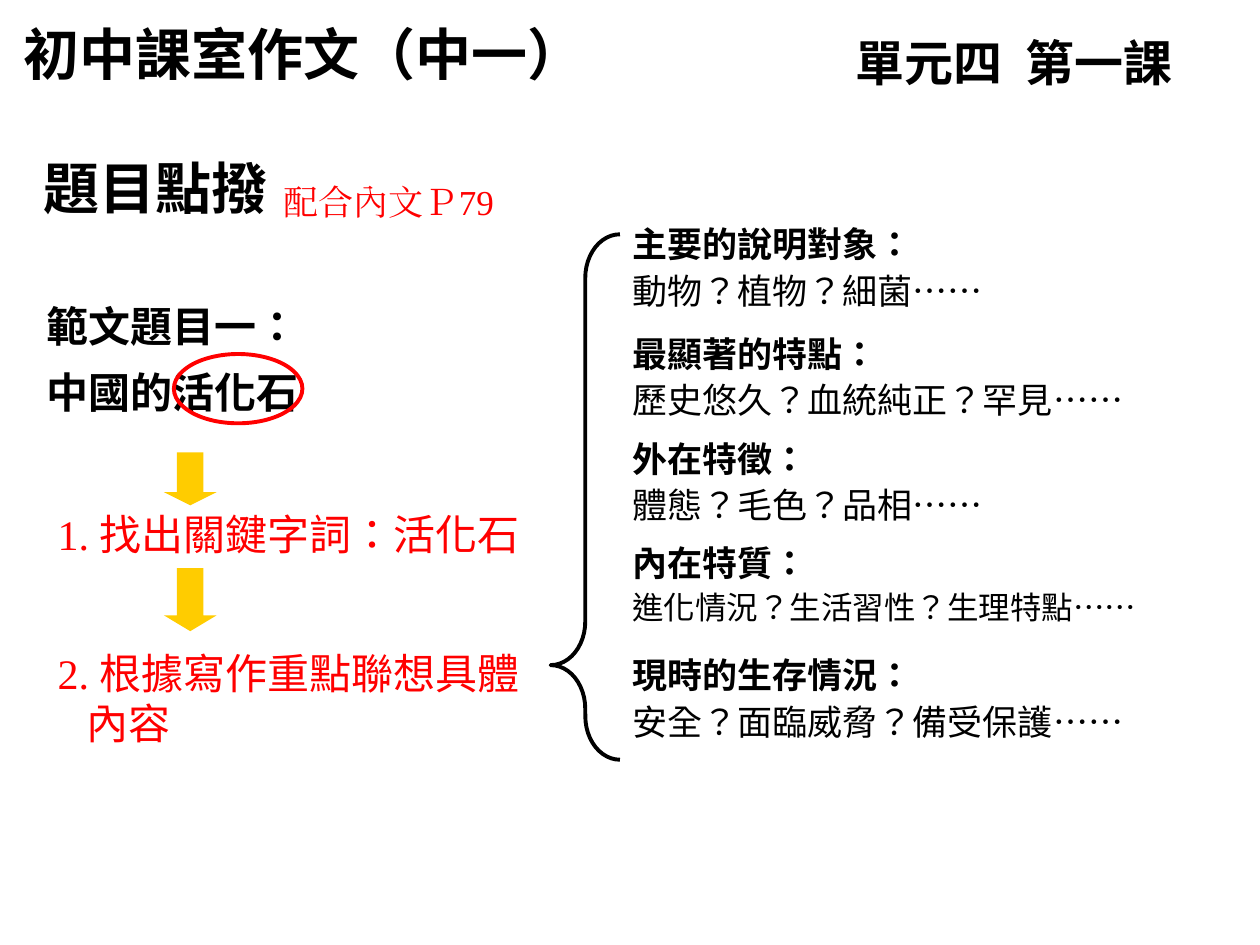
from dataclasses import dataclass

from lxml import etree
from pptx import Presentation
from pptx import util as u
from pptx.dml.color import RGBColor
from pptx.enum import lang, shapes, text
from pptx.oxml import ns

BLACK = RGBColor(0x00, 0x00, 0x00)
RED = RGBColor(0xFF, 0x00, 0x00)
GOLD = RGBColor(0xFF, 0xCC, 0x00)
SANS = "DejaVu Sans"
SERIF = "Times New Roman"
CJK = "Noto Sans CJK SC"


@dataclass
class Words:
    content: str
    size: float
    face: str = SANS
    color: RGBColor = BLACK
    bold: bool = False


@dataclass
class Line:
    words: list[Words]
    before: float = 0
    spacing: float = 1.0
    align: text.PP_ALIGN = text.PP_ALIGN.LEFT
    margin: float = 0
    indent: float = 0


@dataclass
class Box:
    left: float
    top: float
    width: float
    height: float

    def lengths(self) -> list[u.Length]:
        return [u.Inches(n) for n in (self.left, self.top, self.width, self.height)]


@dataclass
class Aspect:
    heading: str
    questions: str
    heading_gap: float
    size: float = 20


def add_words(paragraph, words: Words) -> None:
    run = paragraph.add_run()
    run.text = words.content
    font = run.font
    font.size = u.Pt(words.size)
    font.bold = words.bold
    font.name = words.face
    font.color.rgb = words.color
    font.language_id = lang.MSO_LANGUAGE_ID.TRADITIONAL_CHINESE
    etree.SubElement(run._r.rPr, ns.qn("a:ea")).set("typeface", words.face)


def add_text(slide, box: Box, lines: list[Line]) -> None:
    frame = slide.shapes.add_textbox(*box.lengths()).text_frame
    frame.word_wrap = True
    for index, line in enumerate(lines):
        paragraph = frame.add_paragraph() if index else frame.paragraphs[0]
        paragraph.alignment = line.align
        paragraph.line_spacing = line.spacing
        if index:
            paragraph.space_before = u.Pt(line.before)
        if line.margin:
            properties = paragraph._p.get_or_add_pPr()
            properties.set("marL", str(u.Inches(line.margin)))
            properties.set("indent", str(u.Inches(line.indent)))
        for words in line.words:
            add_words(paragraph, words)


def add_figure(slide, kind: shapes.MSO_SHAPE, box: Box, adjustments: tuple = (),
               fill: RGBColor | None = None, outline: RGBColor | None = None) -> None:
    figure = slide.shapes.add_shape(kind, *box.lengths())
    figure.shadow.inherit = False
    for index, value in enumerate(adjustments):
        figure.adjustments[index] = value
    if fill is None:
        figure.fill.background()
    else:
        figure.fill.solid()
        figure.fill.fore_color.rgb = fill
    if outline is None:
        figure.line.fill.background()
    else:
        figure.line.color.rgb = outline
        figure.line.width = u.Pt(2.25)


def add_step(slide, box: Box, number: str, task: str, rest: str = "") -> None:
    hang = 0.23
    lines = [Line([Words(number, 24, SERIF, RED), Words(task, 24, SANS, RED)],
                  margin=hang, indent=-hang)]
    if rest:
        lines.append(Line([Words(rest, 24, SANS, RED)], margin=hang))
    add_text(slide, box, lines)


def aspect_lines(aspects: list[Aspect]) -> list[Line]:
    lines = []
    for aspect in aspects:
        lines.append(Line([Words(aspect.heading, 20, bold=True)], aspect.heading_gap))
        lines.append(Line([Words(aspect.questions, aspect.size),
                           Words("……", aspect.size, CJK)], 2.4))
    return lines


ASPECTS = [
    Aspect("主要的說明對象：", "動物？植物？細菌", 0),
    Aspect("最顯著的特點：", "歷史悠久？血統純正？罕見", 12),
    Aspect("外在特徵：", "體態？毛色？品相", 9.5),
    Aspect("內在特質：", "進化情況？生活習性？生理特點", 9.5, 18),
    Aspect("現時的生存情況：", "安全？面臨威脅？備受保護", 16),
]


def main() -> None:
    deck = Presentation()
    deck.slide_width, deck.slide_height = u.Inches(10), u.Inches(7.5)
    slide = deck.slides.add_slide(deck.slide_layouts[6])
    kinds = shapes.MSO_SHAPE

    add_text(slide, Box(0.27, 2.22, 5, 1.14),
             [Line([Words(topic, 24, bold=True)], spacing=1.3)
              for topic in ("範文題目一：", "中國的活化石")])
    add_figure(slide, kinds.OVAL, Box(1.38, 2.81, 1.02, 0.55), outline=RED)

    for top, height, head in ((3.59, 0.42, 0.25), (4.51, 0.5, 0.3)):
        add_figure(slide, kinds.DOWN_ARROW, Box(1.3, top, 0.42, height),
                   (0.5, head), fill=GOLD)
    add_step(slide, Box(0.36, 3.99, 4.25, 0.5), "1. ", "找出關鍵字詞：活化石")
    add_step(slide, Box(0.36, 5.09, 4.17, 0.9), "2. ", "根據寫作重點聯想具體", "內容")

    add_figure(slide, kinds.LEFT_BRACE, Box(4.37, 1.86, 0.55, 4.17),
               (0.63, 0.82), outline=BLACK)

    for box, title, size, face in (
        (Box(0.09, 0.11, 5.22, 0.63), "初中課室作文（中一）", 32, "Lato"),
        (Box(0.25, 1.17, 3.08, 0.63), "題目點撥", 32, "Arial"),
        (Box(6.69, 0.21, 3.35, 0.57), "單元四  第一課", 28, "Lato"),
    ):
        add_text(slide, box, [Line([Words(title, size, face, bold=True)])])
    add_text(slide, Box(1.85, 1.38, 2.47, 0.43),
             [Line([Words("配合內文Ｐ79", 20, SERIF, RED)], align=text.PP_ALIGN.CENTER)])
    add_text(slide, Box(4.92, 1.72, 4.25, 4.58), aspect_lines(ASPECTS))

    deck.save("out.pptx")


if __name__ == "__main__":
    main()
